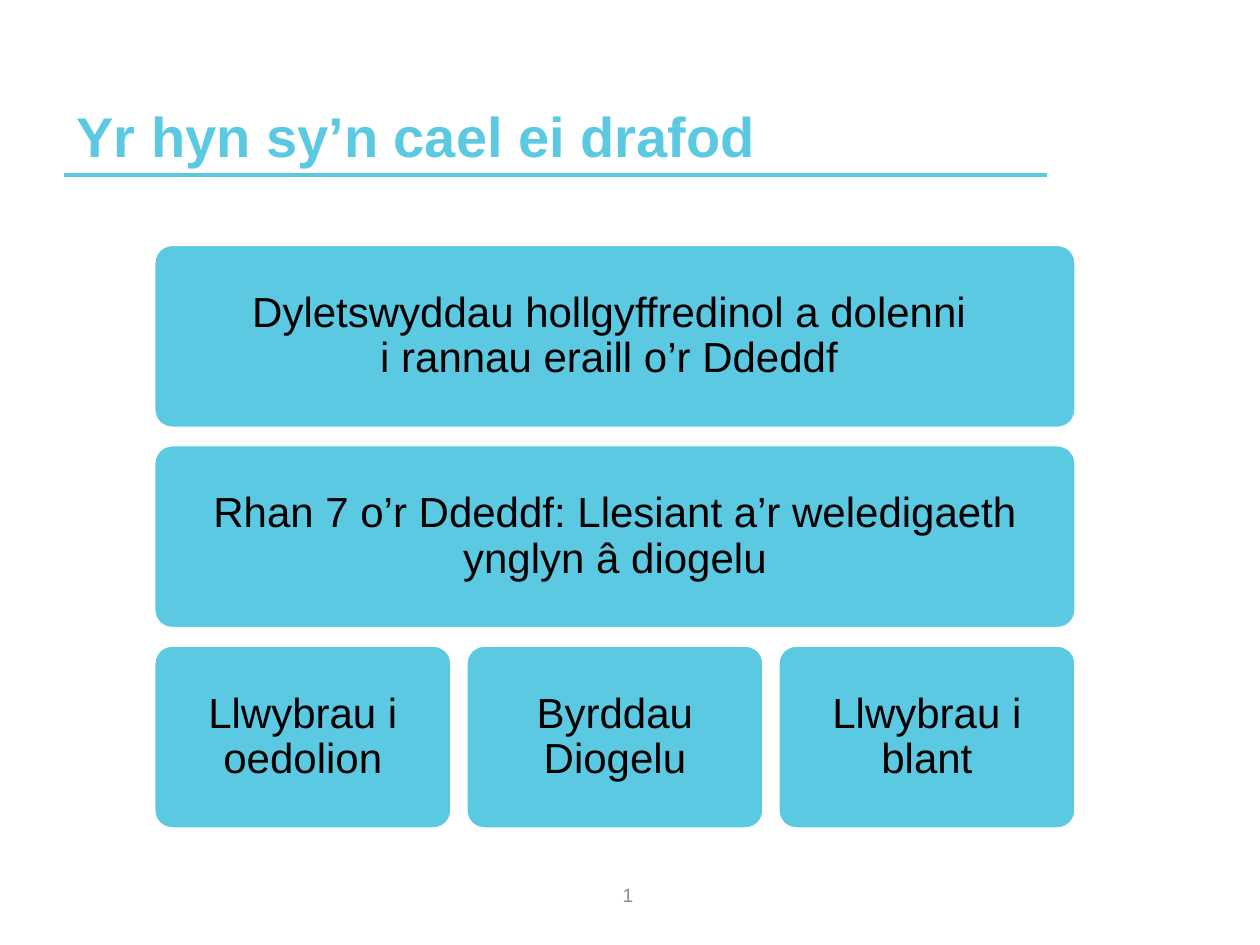
from dataclasses import dataclass

from lxml import etree
from pptx import Presentation
from pptx.dml.color import RGBColor
from pptx.enum.shapes import MSO_CONNECTOR, MSO_SHAPE
from pptx.enum.text import MSO_ANCHOR, PP_ALIGN
from pptx.oxml.ns import qn
from pptx.util import Inches, Pt

ROUNDED = MSO_SHAPE.ROUNDED_RECTANGLE
STRAIGHT = MSO_CONNECTOR.STRAIGHT
MIDDLE, BOTTOM = MSO_ANCHOR.MIDDLE, MSO_ANCHOR.BOTTOM
LEFT, CENTER = PP_ALIGN.LEFT, PP_ALIGN.CENTER


@dataclass(frozen=True)
class Theme:
    font: str = "Arial"
    accent: RGBColor = RGBColor(0x5C, 0xC9, 0xE3)
    ink: RGBColor = RGBColor(0, 0, 0)
    muted: RGBColor = RGBColor(0x8C, 0x8C, 0x8C)
    paper: RGBColor = RGBColor(255, 255, 255)
    title: int = 32
    body: int = 24
    small: int = 11
    rule: int = 2


THEME = Theme()

TITLE = "Yr hyn sy’n cael ei drafod"
ROWS = [
    ["Dyletswyddau hollgyffredinol a dolenni \vi rannau eraill o’r Ddeddf "],
    ["Rhan 7 o’r Ddeddf: Llesiant a’r weledigaeth ynglyn â diogelu"],
    ["Llwybrau i oedolion", "Byrddau Diogelu", "Llwybrau i blant"],
]


def set_attrs(target, values):
    for name, value in values.items():
        setattr(target, name, value)


def write(sp, text, size, color, align=CENTER, anchor=MIDDLE, bold=False):
    tf = sp.text_frame
    set_attrs(tf, {"word_wrap": True, "vertical_anchor": anchor})
    p = tf.paragraphs[0]
    p.text = text
    p.alignment = align
    for r in p.runs:
        set_attrs(r.font, {"name": THEME.font, "size": Pt(size), "bold": bold})
        r.font.color.rgb = color
    return tf, p


def add_title(s, text, x, y, w, h):
    base = Inches(y + h)
    line = s.shapes.add_connector(STRAIGHT, Inches(x), base, Inches(x + w), base)
    line.line.color.rgb = THEME.accent
    line.line.width = Pt(THEME.rule)
    etree.SubElement(line._element.spPr, qn("a:effectLst"))
    sp = s.shapes.add_textbox(Inches(x), Inches(y), Inches(w), Inches(h))
    write(sp, text, THEME.title, THEME.accent, LEFT, BOTTOM, True)


def add_card(s, text, x, y, w, h):
    sp = s.shapes.add_shape(ROUNDED, Inches(x), Inches(y), Inches(w), Inches(h))
    sp.adjustments[0] = 0.1
    sp.shadow.inherit = False
    sp.fill.solid()
    sp.fill.fore_color.rgb = THEME.accent
    sp.line.color.rgb = THEME.paper
    sp.line.width = Pt(THEME.rule)
    tf, p = write(sp, text, THEME.body, THEME.ink)
    p.line_spacing = 0.9
    sides = ("left", "top", "right", "bottom")
    set_attrs(tf, {f"margin_{side}": Inches(0.1) for side in sides})


def add_card_rows(s, rows, x, y, w, h, col_gap=0.11, row_gap=0.13):
    card_h = (h - row_gap * (len(rows) - 1)) / len(rows)
    for i, row in enumerate(rows):
        card_w = (w - col_gap * (len(row) - 1)) / len(row)
        for j, text in enumerate(row):
            left, top = x + j * (card_w + col_gap), y + i * (card_h + row_gap)
            add_card(s, text, left, top, card_w, card_h)


def add_page_number(s, number, x, y, w, h):
    sp = s.shapes.add_textbox(Inches(x), Inches(y), Inches(w), Inches(h))
    write(sp, str(number), THEME.small, THEME.muted)


def main():
    prs = Presentation()
    set_attrs(prs, {"slide_width": Inches(10), "slide_height": Inches(7.5)})
    s = prs.slides.add_slide(prs.slide_layouts[6])
    add_title(s, TITLE, 0.51, 0.31, 7.8, 1.08)
    add_card_rows(s, ROWS, 1.22, 1.94, 7.32, 4.64)
    add_page_number(s, 1, 3.82, 6.9, 2.33, 0.4)
    prs.save("out.pptx")


if __name__ == "__main__":
    main()
